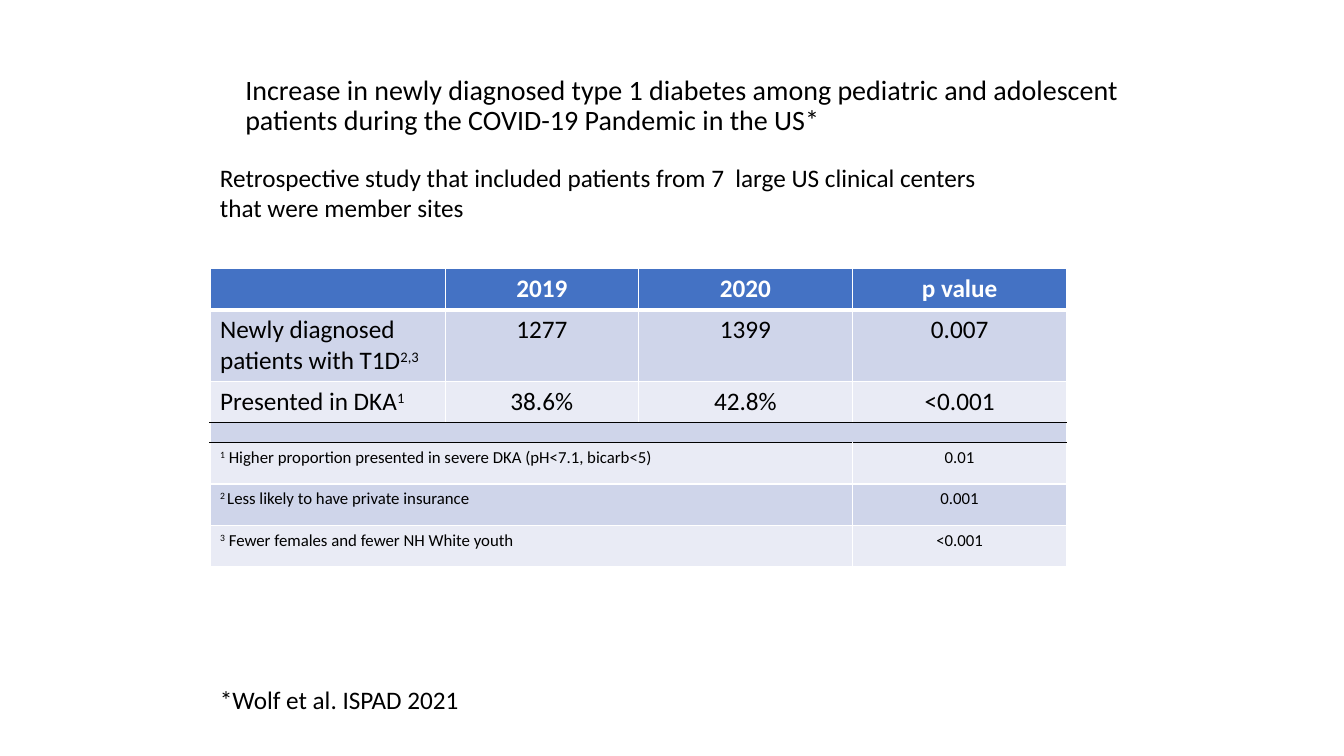
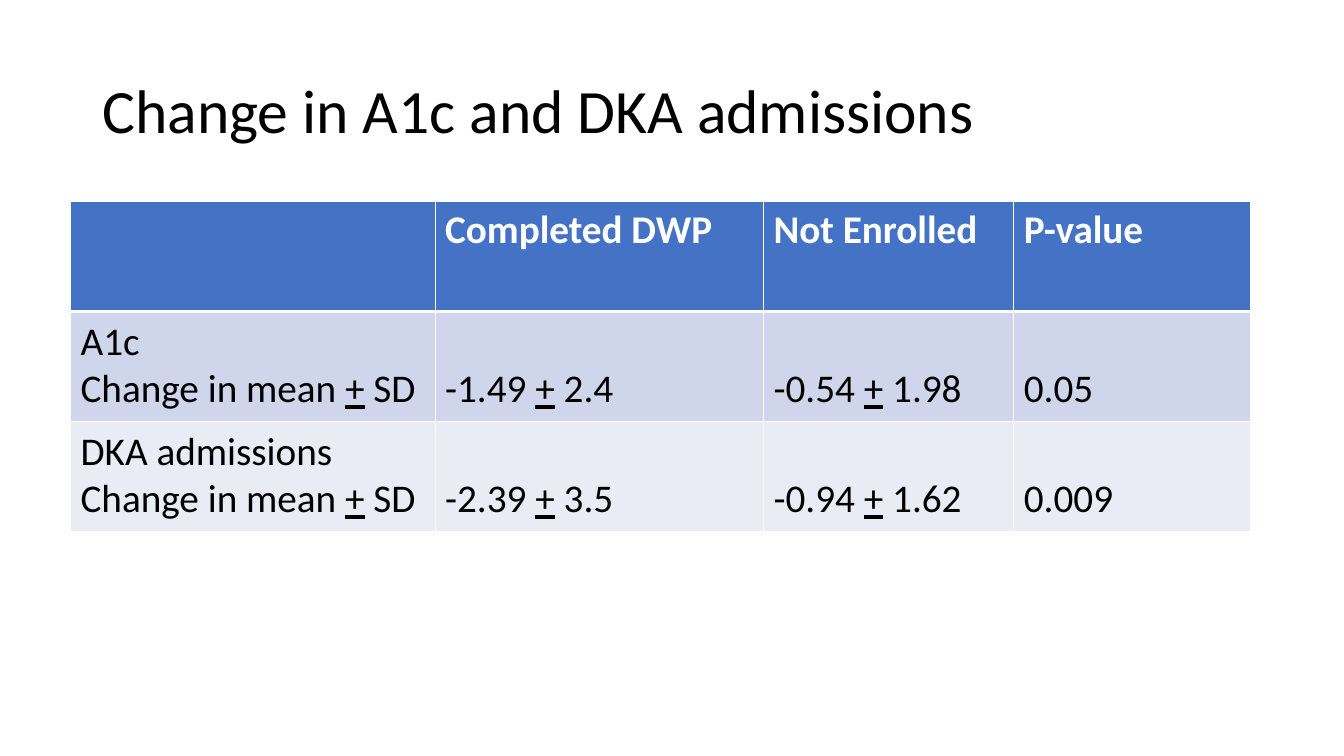
from lxml.etree import SubElement
from pptx import Presentation
from pptx.dml.color import RGBColor
from pptx.enum.text import MSO_ANCHOR as Anchor, MSO_AUTO_SIZE as AutoSize, PP_ALIGN as Align
from pptx.oxml.ns import qn
from pptx.util import Inches, Pt

COLORS = {"text": "000000", "inverse": "FFFFFF", "header": "4472C4",
          "odd": "CFD5EA", "even": "E9EBF5", "grid": "FFFFFF", "rule": "000000"}
FONT = "Calibri"
COLUMNS, ROWS = 160, 90
SUPERSCRIPT = {"baseline": "30000"}
UNDERLINE = {"u": "sng"}

CENTERS = [
    ["", "2019", "2020", "p value"],
    ["Newly diagnosed patients with T1D|2,3|", "1277", "1399", "0.007"],
    ["Presented in DKA|1|", "38.6%", "42.8%", "<0.001"],
    ["", "", "", ""],
    ["|1| Higher proportion presented in severe DKA (pH<7.1, bicarb<5)", "", "", "0.01"],
    ["|2 |Less likely to have private insurance", "", "", "0.001"],
    ["|3| Fewer females and fewer NH White youth", "", "", "<0.001"],
]
CHANGES = [
    ["", "Completed DWP", "Not Enrolled", "P-value"],
    ["A1c\nChange in mean |+| SD", "-1.49 |+| 2.4", "-0.54 |+| 1.98", "0.05"],
    ["DKA admissions\nChange in mean |+| SD", "-2.39 |+| 3.5", "-0.94 |+| 1.62", "0.009"],
]


def grid(count):
    """Turn grid columns or rows, twelve to the inch, into a length."""
    return Inches(count / 12)


def write(frame, text, size, color="text", bold=False, align=Align.LEFT, mark=None):
    """Write one paragraph per line; parts between bars carry the mark."""
    for index, line in enumerate(text.split("\n")):
        paragraph = frame.add_paragraph() if index else frame.paragraphs[0]
        paragraph.alignment = align
        font = paragraph.font
        font.name, font.size, font.bold = FONT, Pt(size), bold
        font.color.rgb = RGBColor.from_string(COLORS[color])
        for position, part in enumerate(line.split("|")):
            if not part:
                continue
            run = paragraph.add_run()
            run.text = part
            if position % 2 and mark:
                properties = run._r.get_or_add_rPr()
                for name, value in mark.items():
                    properties.set(name, value)


def add_titled_slide(presentation, title, box, size):
    """Add a title-only slide and place its title in the box."""
    slide = presentation.slides.add_slide(presentation.slide_layouts[5])
    shape = slide.shapes.title
    shape.left, shape.top, shape.width, shape.height = map(grid, box)
    frame = shape.text_frame
    frame.word_wrap, frame.auto_size = True, AutoSize.NONE
    frame.vertical_anchor = Anchor.MIDDLE
    write(frame, title, size)
    frame.paragraphs[0].line_spacing = 0.9
    return slide


def add_note(slide, text, box):
    """Add an unwrapped text box."""
    frame = slide.shapes.add_textbox(*map(grid, box)).text_frame
    frame.word_wrap = False
    write(frame, text, 18)


def set_borders(cell, top, bottom):
    """Draw the four cell borders; top and bottom are (color, points)."""
    side = ("grid", 1)
    properties = cell._tc.get_or_add_tcPr()
    for tag, (color, points) in zip(("lnL", "lnR", "lnT", "lnB"), (side, side, top, bottom)):
        line = SubElement(properties, qn(f"a:{tag}"), w=str(Pt(points)))
        SubElement(SubElement(line, qn("a:solidFill")), qn("a:srgbClr"), val=COLORS[color])


def add_banded_table(slide, rows, left, top, widths, heights, size, mark,
                     align=Align.LEFT, anchor=Anchor.TOP, rules=(), small_from=None):
    """Add a table with a header, banded rows and black rules below the listed rows."""
    table = slide.shapes.add_table(len(rows), len(widths), *map(
        grid, (left, top, sum(widths), sum(heights)))).table
    table.first_row = table.horz_banding = False
    for column, width in zip(table.columns, widths):
        column.width = grid(width)
    edges = [("rule", 1) if index in rules else ("grid", 1) for index in range(len(rows))]
    edges[0] = ("grid", 3)
    for index, values in enumerate(rows):
        table.rows[index].height = grid(heights[index])
        header = index == 0
        small = small_from is not None and index >= small_from
        fill = "header" if header else "odd" if index % 2 else "even"
        for column, value in enumerate(values):
            cell = table.cell(index, column)
            set_borders(cell, edges[index - 1] if index else ("grid", 1), edges[index])
            cell.fill.solid()
            cell.fill.fore_color.rgb = RGBColor.from_string(COLORS[fill])
            if not header:
                cell.vertical_anchor = anchor
                if anchor == Anchor.BOTTOM:
                    cell.margin_bottom = Inches(0.08)
            if value:
                write(cell.text_frame, value, 12 if small else size,
                      "inverse" if header else "text", header,
                      align if column else Align.LEFT, mark)
            elif not header:
                SubElement(cell.text_frame.paragraphs[0]._p, qn("a:endParaRPr"), sz="200")
    return table


def build_centers_slide(presentation):
    """Build the slide on newly diagnosed patients."""
    slide = add_titled_slide(
        presentation,
        "Increase in newly diagnosed type 1 diabetes among pediatric and adolescent "
        "patients during the COVID-19 Pandemic in the US*", (28, 6.7, 108, 12), 20)
    table = add_banded_table(
        slide, CENTERS, 25, 32, (28, 23, 25.5, 25.5), (4.9, 8.5, 4.9, 2.4, 4.9, 4.9, 4.9),
        18, SUPERSCRIPT, align=Align.CENTER, rules=(2, 3), small_from=4)
    for row, last in ((3, 3), (4, 2), (5, 2), (6, 2)):
        table.cell(row, 0).merge(table.cell(row, last))
    add_note(slide, "*Wolf et al. ISPAD 2021", (25, 80.9, 31.2, 4.8))
    add_note(slide, "Retrospective study that included patients from 7  large US clinical "
                    "centers\nthat were member sites", (25, 18.7, 95, 8.5))


def build_changes_slide(presentation):
    """Build the slide on changes in A1c and admissions."""
    slide = add_titled_slide(presentation, "Change in A1c and DKA admissions",
                             (11, 4.8, 138, 17.4), 44)
    add_banded_table(slide, CHANGES, 8.4, 24, (43.4, 39.1, 29.8, 28.2), (13.1,) * 3,
                     28, UNDERLINE, anchor=Anchor.BOTTOM)


def main():
    """Build and save the presentation."""
    presentation = Presentation()
    presentation.slide_width, presentation.slide_height = grid(COLUMNS), grid(ROWS)
    build_centers_slide(presentation)
    build_changes_slide(presentation)
    presentation.save("out.pptx")


if __name__ == "__main__":
    main()
